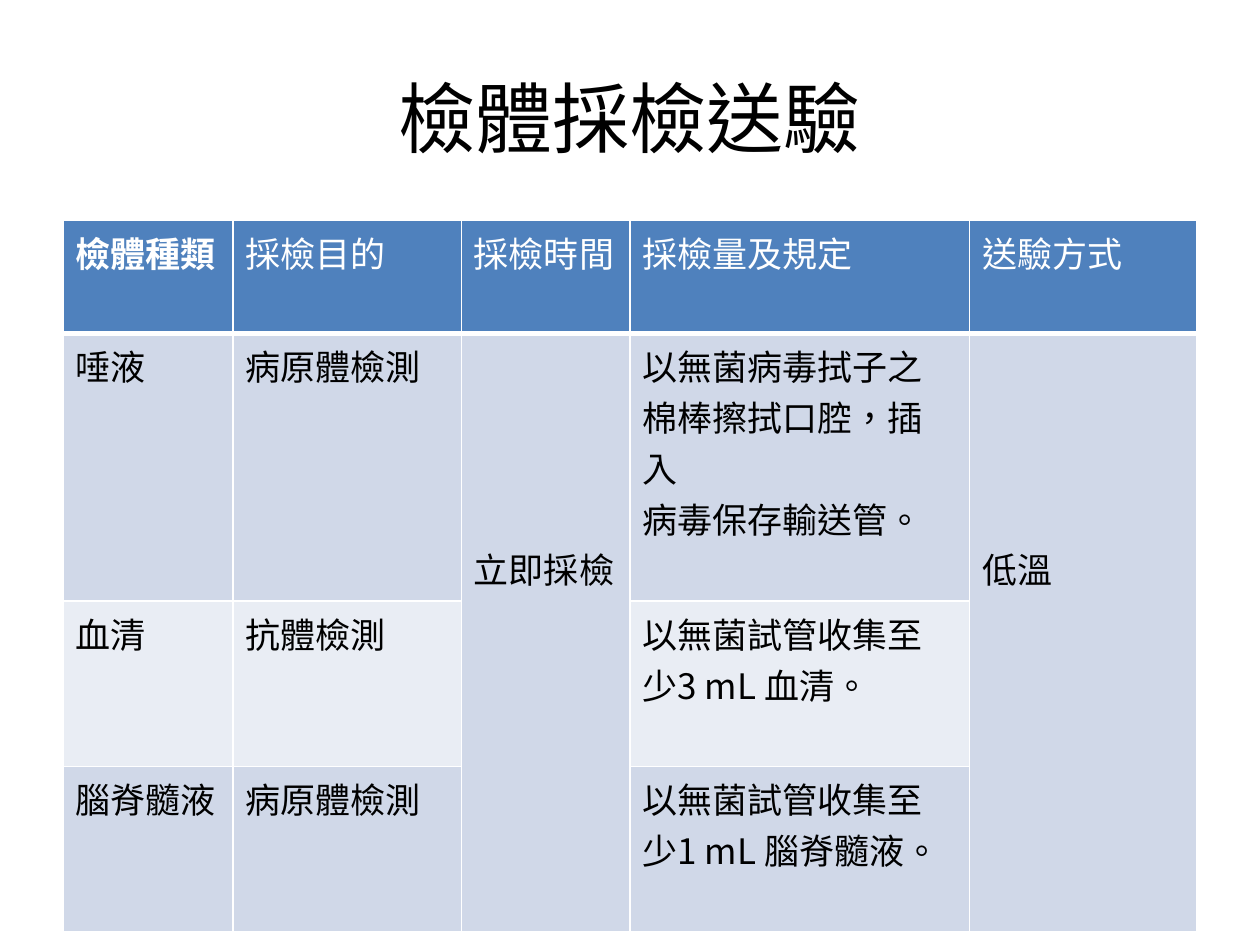
from dataclasses import dataclass

from lxml import etree
from pptx import Presentation
from pptx import util as u
from pptx.dml.color import RGBColor
from pptx.enum import lang, text
from pptx.oxml import ns


@dataclass(frozen=True)
class Theme:
    """Colours, typefaces and type sizes of the deck."""
    ink: str = "000000"
    paper: str = "FFFFFF"
    header: str = "4F81BD"
    bands: tuple = ("D0D8E8", "E9EDF4")
    title_face: str = "Arial"
    table_face: str = "Noto Sans CJK SC"
    title_size: int = 44
    table_size: int = 20
    rule: int = 1
    header_rule: int = 3


def write(frame, content, *, face, size, color, bold=False, align=text.PP_ALIGN.LEFT):
    """Fill a text frame with one paragraph per line of content."""
    frame.word_wrap = True
    for index, line in enumerate(content.split("\n")):
        para = frame.add_paragraph() if index else frame.paragraphs[0]
        para.alignment = align
        span = para.add_run()
        span.text = line
        font = span.font
        font.size, font.bold, font.name = u.Pt(size), bold, face
        font.color.rgb = RGBColor.from_string(color)
        font.language_id = lang.MSO_LANGUAGE_ID.TRADITIONAL_CHINESE
        etree.SubElement(span._r.get_or_add_rPr(), ns.qn("a:ea"), typeface=face)


class Page:
    """A slide together with the theme that styles its elements."""

    def __init__(self, deck, theme):
        """Add a blank slide to the deck."""
        self.theme = theme
        self.slide = deck.slides.add_slide(deck.slide_layouts[6])

    def title(self, content, left, top, width, height):
        """Add the centred heading."""
        box = self.slide.shapes.add_textbox(left, top, width, height)
        box.text_frame.vertical_anchor = text.MSO_ANCHOR.MIDDLE
        write(box.text_frame, content, face=self.theme.title_face,
              size=self.theme.title_size, color=self.theme.ink,
              align=text.PP_ALIGN.CENTER)

    def borders(self, cell, **widths):
        """Draw cell borders, given as side=points."""
        properties = cell._tc.get_or_add_tcPr()
        for side, points in widths.items():
            line = etree.SubElement(properties, ns.qn(f"a:ln{side}"), w=str(u.Pt(points)))
            fill = etree.SubElement(line, ns.qn("a:solidFill"))
            etree.SubElement(fill, ns.qn("a:srgbClr"), val=self.theme.paper)

    def table(self, rows, left, top, widths, heights):
        """Add a banded table whose first row is the header."""
        theme = self.theme
        table = self.slide.shapes.add_table(
            len(rows), len(widths), left, top, sum(widths), sum(heights)).table
        for column, width in zip(table.columns, widths):
            column.width = width
        for row, height in zip(table.rows, heights):
            row.height = height
        for r, row in enumerate(rows):
            for c, content in enumerate(row):
                cell = table.cell(r, c)
                self.borders(cell, L=theme.rule, R=theme.rule,
                             T=theme.header_rule if r == 1 else theme.rule,
                             B=theme.rule if r else theme.header_rule)
                cell.fill.solid()
                cell.fill.fore_color.rgb = RGBColor.from_string(
                    theme.bands[(r - 1) % 2] if r else theme.header)
                if content:
                    write(cell.text_frame, content, face=theme.table_face,
                          size=theme.table_size, bold=(r, c) == (0, 0),
                          color=theme.ink if r else theme.paper)
        return table

    def span_rows(self, table, column, first, last, inset):
        """Merge cells down a column and lower their text by the inset."""
        cell = table.cell(first, column)
        cell.merge(table.cell(last, column))
        cell.margin_top = inset


ROWS = [
    ("檢體種類", "採檢目的", "採檢時間", "採檢量及規定", "送驗方式"),
    ("唾液", "病原體檢測", "立即採檢",
     "以無菌病毒拭子之\n棉棒擦拭口腔，插入\n病毒保存輸送管。", "低溫"),
    ("血清", "抗體檢測", "", "以無菌試管收集至\n少3 mL 血清。", ""),
    ("腦脊髓液", "病原體檢測", "", "以無菌試管收集至\n少1 mL 腦脊髓液。", ""),
]


def main():
    """Build and save the specimen slide."""
    deck = Presentation()
    deck.slide_width, deck.slide_height = u.Cm(25.4), u.Cm(19.05)
    page = Page(deck, Theme())
    left = u.Cm(1.27)
    page.title("檢體採檢送驗", left, u.Cm(0.76), u.Cm(22.86), u.Cm(3.18))
    table = page.table(ROWS, left, u.Cm(4.45),
                       [u.Cm(width) for width in (3.43, 4.6, 3.4, 6.85, 4.58)],
                       [u.Cm(height) for height in (2.28, 5.39, 3.33, 3.33)])
    for column in (2, 4):
        page.span_rows(table, column, 1, 3, u.Cm(4.22))
    deck.save("out.pptx")


if __name__ == "__main__":
    main()
